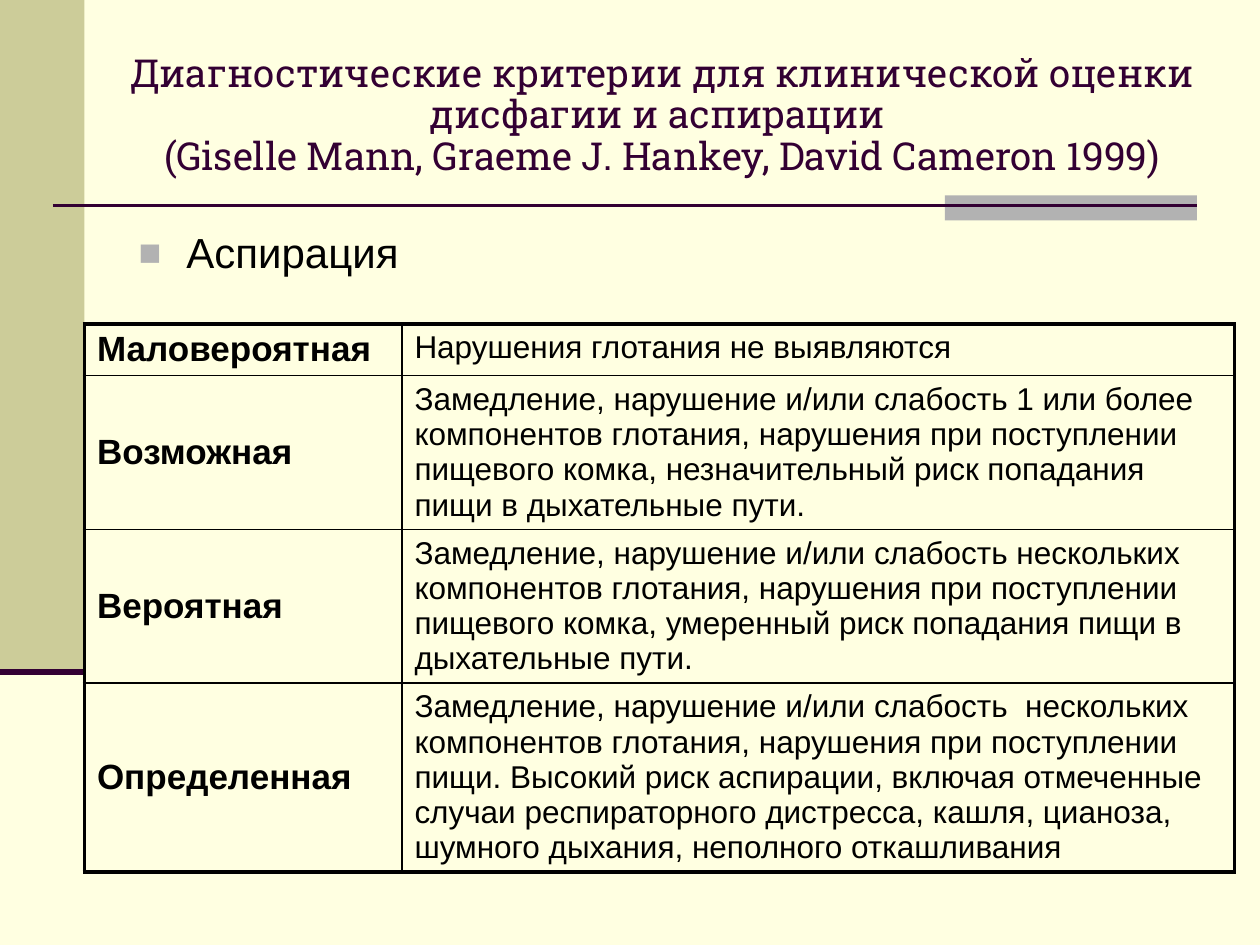
"""Build the slide on diagnostic criteria for dysphagia and aspiration."""
from lxml import etree
from pptx import Presentation, oxml
from pptx import util as u
from pptx.dml.color import RGBColor
from pptx.enum import shapes, text
from pptx.oxml import ns

COLORS = {"page": "FFFFE1", "band": "CCCC99", "accent": "B2B2B2",
          "plum": "330033", "ink": "000000"}
CRITERIA = [
    ("Маловероятная", "Нарушения глотания не выявляются", 0.41),
    ("Возможная", "Замедление, нарушение и/или слабость 1 или более компонентов глотания, "
     "нарушения при поступлении пищевого комка, незначительный риск попадания пищи "
     "в дыхательные пути.", 1.22),
    ("Вероятная", "Замедление, нарушение и/или слабость нескольких компонентов глотания, "
     "нарушения при поступлении пищевого комка, умеренный риск попадания пищи "
     "в дыхательные пути.", 1.22),
    ("Определенная", "Замедление, нарушение и/или слабость  нескольких компонентов глотания, "
     "нарушения при поступлении пищи. Высокий риск аспирации, включая отмеченные случаи "
     "респираторного дистресса, кашля, цианоза, шумного дыхания, неполного откашливания", 1.5),
]


def rgb(name):
    return RGBColor.from_string(COLORS[name])


class SlideBuilder:
    def __init__(self, slide, body_font="Arial", title_font="Roboto Slab"):
        self.slide = slide
        self.body_font = body_font
        self.title_font = title_font
        slide.background.fill.solid()
        slide.background.fill.fore_color.rgb = rgb("page")

    def place(self, holder, left, top, width, height):
        holder.left, holder.top = u.Inches(left), u.Inches(top)
        holder.width, holder.height = u.Inches(width), u.Inches(height)
        holder.text_frame.auto_size = text.MSO_AUTO_SIZE.NONE

    def style(self, paragraph, size, font=None, color="ink", bold=False):
        for run in paragraph.runs:
            run.font.name = font or self.body_font
            run.font.size = u.Pt(size)
            run.font.bold = bold
            run.font.color.rgb = rgb(color)

    def rect(self, left, top, width, height, color):
        block = self.slide.shapes.add_shape(
            shapes.MSO_SHAPE.RECTANGLE, u.Inches(left), u.Inches(top),
            u.Inches(width), u.Inches(height))
        block.shadow.inherit = False
        block.fill.solid()
        block.fill.fore_color.rgb = rgb(color)
        block.line.fill.background()

    def rule(self, left, right, y, weight):
        line = self.slide.shapes.add_connector(
            shapes.MSO_CONNECTOR.STRAIGHT, u.Inches(left), u.Inches(y),
            u.Inches(right), u.Inches(y))
        line.line.color.rgb = rgb("plum")
        line.line.width = u.Pt(weight)
        etree.SubElement(line._element.spPr, ns.qn("a:effectLst"))

    def title(self, wording, *box):
        holder = self.slide.shapes.title
        self.place(holder, *box)
        holder.text_frame.vertical_anchor = text.MSO_ANCHOR.MIDDLE
        holder.text_frame.text = wording
        heading = holder.text_frame.paragraphs[0]
        heading.alignment = text.PP_ALIGN.CENTER
        heading.line_spacing = 0.9
        self.style(heading, 22, self.title_font, "plum")

    def bullet(self, wording, *box):
        holder = self.slide.placeholders[1]
        self.place(holder, *box)
        holder.text_frame.text = wording
        item = holder.text_frame.paragraphs[0]
        item.space_before = u.Pt(0)
        props = item._p.get_or_add_pPr()
        props.set("marL", str(u.Inches(0.38)))
        props.set("indent", str(u.Inches(-0.38)))
        for markup in (f'<a:buClr {{}}><a:srgbClr val="{COLORS["accent"]}"/></a:buClr>',
                       '<a:buSzPct {} val="90000"/>',
                       f'<a:buFont {{}} typeface="{self.body_font}"/>',
                       '<a:buChar {} char="■"/>'):
            props.append(oxml.parse_xml(markup.format(ns.nsdecls("a"))))
        self.style(item, 24)

    def borders(self, cell, outer):
        props = cell._tc.get_or_add_tcPr()
        for side in "LRTB":
            weight = u.Pt(2.25 if side in outer else 1)
            props.append(oxml.parse_xml(
                f'<a:ln{side} {ns.nsdecls("a")} w="{weight}"><a:solidFill>'
                f'<a:srgbClr val="{COLORS["ink"]}"/></a:solidFill></a:ln{side}>'))
        cell.fill.background()

    def criteria_table(self, rows, left, top, widths):
        height = sum(row[2] for row in rows)
        table = self.slide.shapes.add_table(
            len(rows), len(widths), u.Inches(left), u.Inches(top),
            u.Inches(sum(widths)), u.Inches(height)).table
        table.first_row = table.horz_banding = False
        for column, width in zip(table.columns, widths):
            column.width = u.Inches(width)
        for r, (level, criterion, row_height) in enumerate(rows):
            table.rows[r].height = u.Inches(row_height)
            vertical = ("T" if r == 0 else "") + ("B" if r == len(rows) - 1 else "")
            for c, wording in enumerate((level, criterion)):
                cell = table.cell(r, c)
                cell.text_frame.text = wording
                cell.vertical_anchor = text.MSO_ANCHOR.TOP if c else text.MSO_ANCHOR.MIDDLE
                self.style(cell.text_frame.paragraphs[0], 18 if c else 20, bold=c == 0)
                self.borders(cell, vertical + "LR"[c])


def main():
    deck = Presentation()
    deck.slide_width, deck.slide_height = u.Inches(10), u.Inches(7.5)
    page = SlideBuilder(deck.slides.add_slide(deck.slide_layouts[1]))
    page.rect(0, 0, 0.67, 5.33, "band")
    page.rect(7.5, 1.55, 2, 0.2, "accent")
    page.rule(0.42, 9.5, 1.63, 1.5)
    page.rule(0, 0.67, 5.33, 3.5)
    page.title("Диагностические критерии для клинической оценки дисфагии и аспирации \v"
               "(Giselle Mann, Graeme J. Hankey, David Cameron 1999)", 0.51, 0.3, 9.49, 1.25)
    page.bullet("Аспирация", 1, 1.75, 4.17, 0.58)
    page.criteria_table(CRITERIA, 0.67, 2.57, (2.52, 6.61))
    deck.save("out.pptx")


if __name__ == "__main__":
    main()
